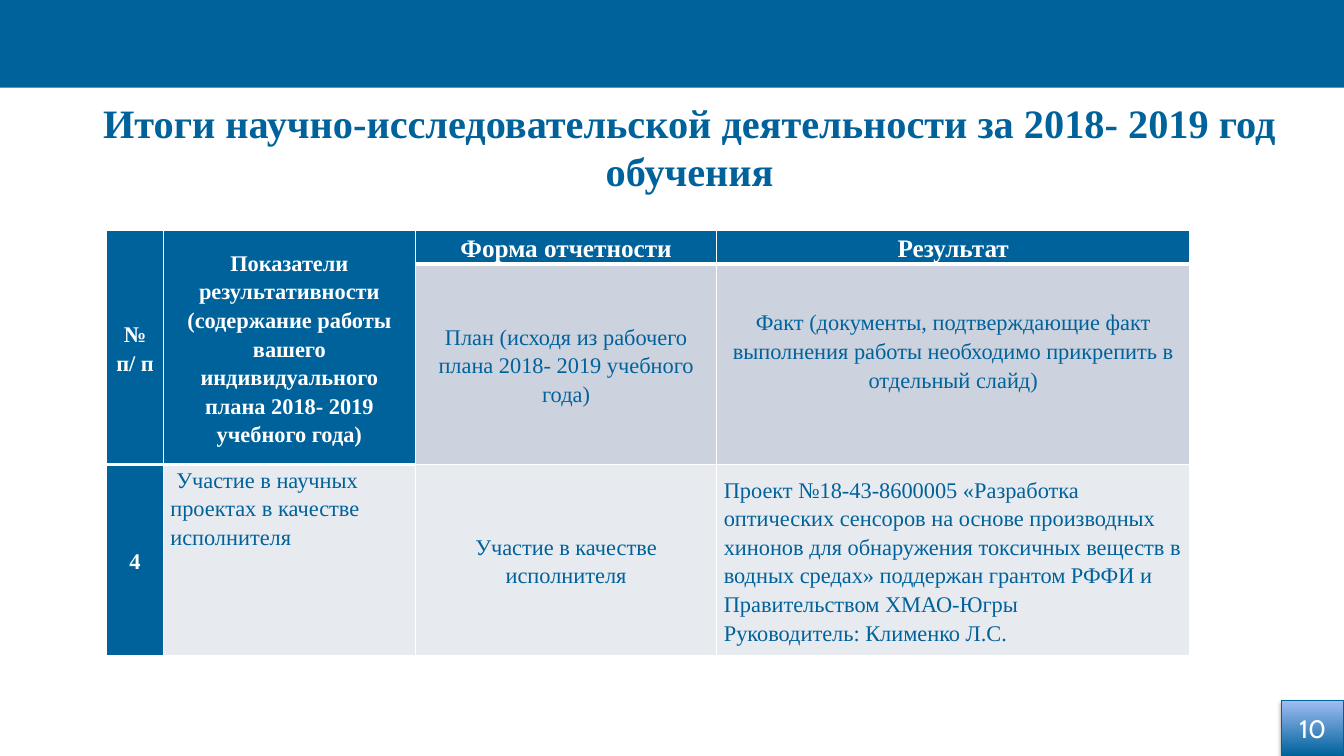
import pptx
import pptx.dml.color
import pptx.enum.shapes
import pptx.enum.text
import pptx.oxml
import pptx.oxml.ns
import pptx.util
from pptx.util import Inches

BLUE, WHITE, GREY, PALE = "00629B", "FFFFFF", "CCD3DE", "E7EAEF"
SERIF = "Times New Roman"
CENTER = pptx.enum.text.PP_ALIGN.CENTER
LEFT = pptx.enum.text.PP_ALIGN.LEFT
MIDDLE = pptx.enum.text.MSO_ANCHOR.MIDDLE
TOP = pptx.enum.text.MSO_ANCHOR.TOP
HEADER_END = (1, 1, 0, 0)

CELLS = [
    (0, 0, "№ п/ п", BLUE, 16, CENTER, MIDDLE),
    (0, 1, "Показатели результативности\n(содержание работы вашего индивидуального "
           "плана 2018- 2019 учебного года)", BLUE, 16, CENTER, MIDDLE),
    (0, 2, "Форма отчетности", BLUE, 18, CENTER, TOP),
    (0, 3, "Результат", BLUE, 18, CENTER, TOP),
    (1, 2, "План (исходя из рабочего плана 2018- 2019 учебного года)",
     GREY, 16, CENTER, MIDDLE),
    (1, 3, "Факт (документы, подтверждающие факт выполнения работы необходимо "
           "прикрепить в отдельный слайд)", GREY, 16, CENTER, MIDDLE),
    (2, 0, "4", BLUE, 16, CENTER, MIDDLE),
    (2, 1, "Участие в научных проектах в качестве исполнителя", PALE, 16, LEFT, TOP),
    (2, 2, "Участие в качестве исполнителя", PALE, 16, CENTER, MIDDLE),
    (2, 3, "Проект №18-43-8600005 «Разработка оптических сенсоров на основе "
           "производных хинонов для обнаружения токсичных веществ в водных средах» "
           "поддержан грантом РФФИ и Правительством ХМАО-Югры\n"
           "Руководитель: Клименко Л.С.", PALE, 16, LEFT, MIDDLE),
]


def rgb(value):
    """Turn a hex string into a colour."""
    return pptx.dml.color.RGBColor.from_string(value)


def format_text(tf, size, color, bold=False, font=SERIF, align=CENTER, spacing=1.0):
    """Format every paragraph and run of a text frame."""
    for p in tf.paragraphs:
        p.alignment = align
        p.line_spacing = spacing
        for r in p.runs:
            r.font.name = font
            r.font.size = pptx.util.Pt(size)
            r.font.bold = bold
            r.font.color.rgb = rgb(color)


def add_rect(s, left, top, width, height):
    """Add a plain rectangle without a shadow."""
    sp = s.shapes.add_shape(pptx.enum.shapes.MSO_SHAPE.RECTANGLE, Inches(left),
                            Inches(top), Inches(width), Inches(height))
    sp.shadow.inherit = False
    return sp


def add_banner(s):
    """Add the blue band across the top."""
    sp = add_rect(s, 0, 0, 13.33, 0.87)
    sp.fill.solid()
    sp.fill.fore_color.rgb = rgb(BLUE)
    sp.line.fill.background()


def set_title(s, text):
    """Place and format the title placeholder."""
    sp = s.shapes.title
    sp.left, sp.top, sp.width, sp.height = (Inches(v) for v in (0.84, 1, 12, 0.9))
    tf = sp.text_frame
    tf.text = text
    tf.word_wrap = True
    tf.auto_size = pptx.enum.text.MSO_AUTO_SIZE.NONE
    tf.vertical_anchor = MIDDLE
    format_text(tf, 28.8, BLUE, bold=True)


def set_borders(cell, row, col):
    """Draw white cell borders, thick below the header."""
    widths = {
        "L": 1,
        "R": 1,
        "T": 3 if row == HEADER_END[col] + 1 else 1,
        "B": 3 if row == HEADER_END[col] else 1,
    }
    tcPr = cell._tc.get_or_add_tcPr()
    for side, width in widths.items():
        tcPr.append(pptx.oxml.parse_xml(
            f'<a:ln{side} {pptx.oxml.ns.nsdecls("a")} w="{pptx.util.Pt(width)}">'
            f'<a:solidFill><a:srgbClr val="{WHITE}"/></a:solidFill></a:ln{side}>'))


def fill_cell(cell, text, fill, size, align, anchor):
    """Write and format one table cell."""
    cell.text = text
    cell.fill.solid()
    cell.fill.fore_color.rgb = rgb(fill)
    cell.vertical_anchor = anchor
    cell.margin_left = cell.margin_right = Inches(0.07)
    cell.margin_top = cell.margin_bottom = 0
    dark = fill == BLUE
    format_text(cell.text_frame, size, WHITE if dark else BLUE, dark,
                align=align, spacing=1.15)


def add_results_table(s):
    """Add the table of planned and actual results."""
    table = s.shapes.add_table(3, 4, Inches(1.06), Inches(2.29),
                               Inches(10.74), Inches(4.21)).table
    for column, width in zip(table.columns, (0.56, 2.5, 2.99, 4.69)):
        column.width = Inches(width)
    for row, height in zip(table.rows, (0.33, 1.98, 1.9)):
        row.height = Inches(height)
    for row in range(3):
        for col in range(4):
            set_borders(table.cell(row, col), row, col)
    for col in range(2):
        table.cell(0, col).merge(table.cell(1, col))
    for row, col, *content in CELLS:
        fill_cell(table.cell(row, col), *content)
    table.cell(1, 3).margin_bottom = Inches(0.28)
    pPr = table.cell(2, 1).text_frame.paragraphs[0]._p.get_or_add_pPr()
    pPr.set("indent", str(Inches(0.06)))


def add_page_number(s, number):
    """Add the shaded page number box in the corner."""
    sp = add_rect(s, 12.71, 6.95, 0.62, 0.55)
    sp.fill.gradient()
    sp.fill.gradient_angle = 90
    for stop, color, position in zip(sp.fill.gradient_stops, (BLUE, "9FBDF3"), (0, 1)):
        stop.color.rgb = rgb(color)
        stop.position = position
    sp.line.color.rgb = rgb("006098")
    sp.line.width = pptx.util.Pt(0.75)
    effects = sp._element.spPr.find(pptx.oxml.ns.qn("a:effectLst"))
    effects.append(pptx.oxml.parse_xml(
        f'<a:outerShdw {pptx.oxml.ns.nsdecls("a")} blurRad="{pptx.util.Pt(3.1)}" '
        f'dist="{pptx.util.Pt(1.8)}" dir="5400000" rotWithShape="0">'
        '<a:srgbClr val="000000"><a:alpha val="35000"/></a:srgbClr></a:outerShdw>'))
    tf = sp.text_frame
    tf.text = number
    tf.vertical_anchor = MIDDLE
    format_text(tf, 18, WHITE, font="Cabin")


def main():
    """Build the slide and save it."""
    prs = pptx.Presentation()
    prs.slide_width, prs.slide_height = Inches(13.33), Inches(7.5)
    s = prs.slides.add_slide(prs.slide_layouts[5])
    add_banner(s)
    set_title(s, "Итоги научно-исследовательской деятельности за 2018- 2019 год обучения")
    add_results_table(s)
    add_page_number(s, "10")
    prs.save("out.pptx")


if __name__ == "__main__":
    main()
